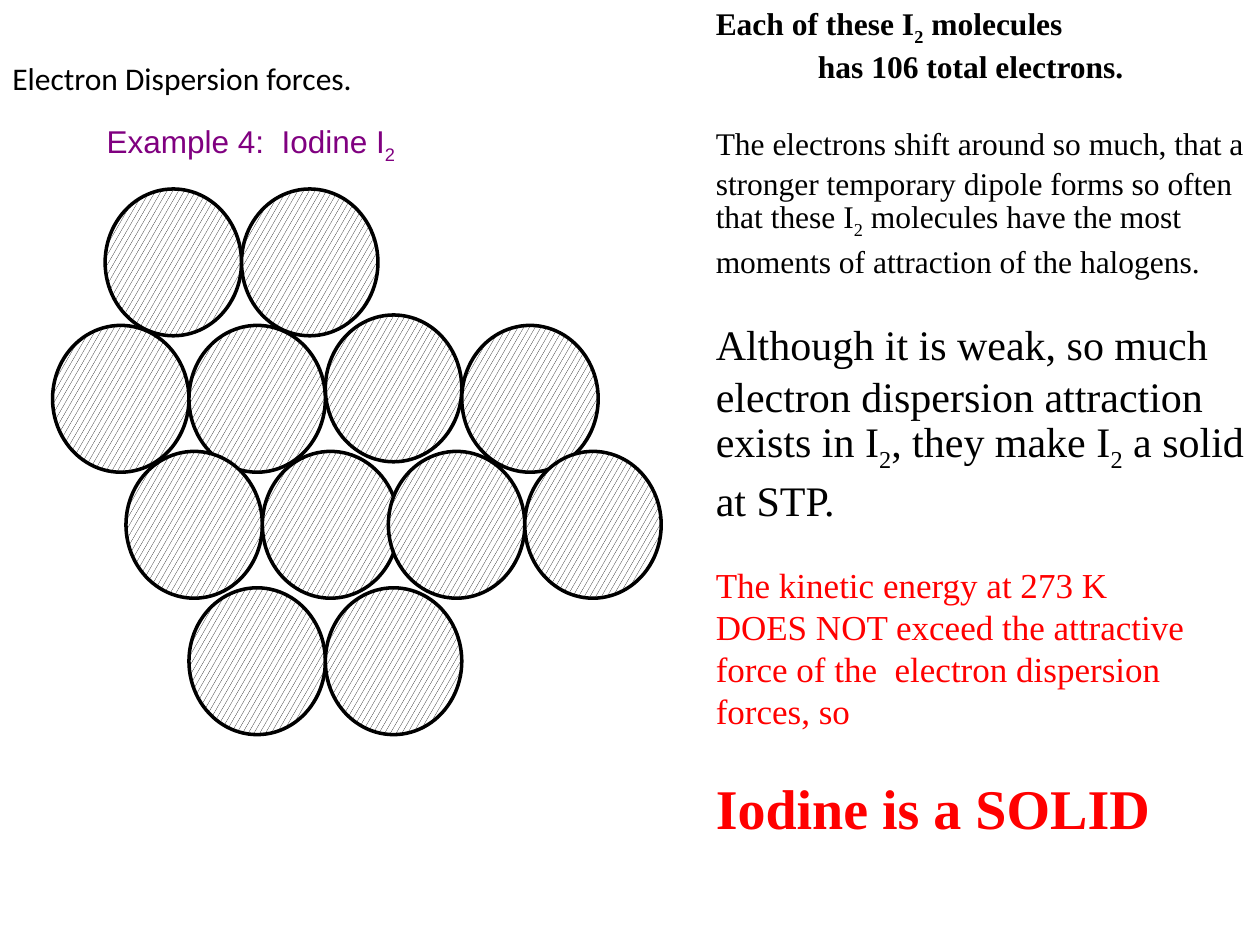
import dataclasses
import typing

import pptx
import pptx.dml.color
import pptx.enum.dml
import pptx.enum.shapes
import pptx.util

Cm = pptx.util.Cm
Pt = pptx.util.Pt

HUES = {"ink": "000000", "paper": "FFFFFF", "plum": "800080", "red": "FF0000"}
WIDE, HIGH = 2.75, 2.96
SERIF = "Times New Roman"


@dataclasses.dataclass
class Para:
    text: str
    size: float
    font: str = SERIF
    hue: str = "ink"
    bold: bool = False
    pitch: typing.Optional[float] = None
    gap: float = 0
    dent: float = 0


@dataclasses.dataclass
class Box:
    left: float
    top: float
    width: float
    height: float
    paras: list[Para]


@dataclasses.dataclass
class Pair:
    left: float
    top: float
    drop: float = 0


BOXES = [
    Box(0, 1.07, 24.33, 1.02, [Para("Electron Dispersion forces.", 18, "Calibri")]),
    Box(14.18, 0, 11.22, 16.92, [
        Para("Each of these I_2_ molecules", 18, bold=True, pitch=23.5),
        Para("has 106 total electrons.", 18, bold=True, pitch=21.6, dent=2.06),
        Para("The electrons shift around so much, that a stronger temporary "
             "dipole forms so often\nthat these I_2_ molecules have the most "
             "moments of attraction of the halogens.", 18, pitch=22.3, gap=21.8),
        Para("Although it is weak, so much electron dispersion attraction "
             "exists in I_2_, they make I_2_ a solid\nat STP.",
             24, pitch=29.8, gap=21.3),
        Para("The kinetic energy at 273 K\nDOES NOT exceed the attractive "
             "force of the  electron dispersion\nforces, so",
             20, hue="red", pitch=24, gap=21.6),
        Para("Iodine is a SOLID", 32, hue="red", bold=True, pitch=38.4, gap=24),
    ]),
    Box(1.9, 2.33, 10.16, 1.02,
        [Para("Example 4:  Iodine I_2_", 18, "Arial", "plum")]),
]

PAIRS = [
    Pair(2.12, 3.81),
    Pair(1.06, 6.56),
    Pair(6.56, 6.35, 0.21),
    Pair(2.54, 9.1),
    Pair(7.83, 9.1),
    Pair(3.81, 11.85),
]


def tint(hue: str) -> pptx.dml.color.RGBColor:
    return pptx.dml.color.RGBColor.from_string(HUES[hue])


def apply(item: typing.Any, form: dict) -> None:
    for name, value in form.items():
        setattr(item, name, value)


def write(line: typing.Any, para: Para) -> None:
    apply(line, {"space_before": Pt(para.gap)})
    if para.pitch:
        line.line_spacing = Pt(para.pitch)
    if para.dent:
        line._p.get_or_add_pPr().set("marL", str(Cm(para.dent)))
    form = {"name": para.font, "size": Pt(para.size), "bold": para.bold}
    for row, text in enumerate(para.text.split("\n")):
        if row:
            line.add_line_break()
        for part, words in enumerate(text.split("_")):
            if not words:
                continue
            run = line.add_run()
            run.text = words
            apply(run.font, form)
            run.font.color.rgb = tint(para.hue)
            if part % 2:
                run._r.get_or_add_rPr().set("baseline", "-25000")


def place(slide: typing.Any, box: Box) -> None:
    area = (box.left, box.top, box.width, box.height)
    frame = slide.shapes.add_textbox(*map(Cm, area)).text_frame
    frame.word_wrap = True
    for count, para in enumerate(box.paras):
        line = frame.add_paragraph() if count else frame.paragraphs[0]
        write(line, para)


def atom(slide: typing.Any, left: float, top: float) -> None:
    ball = slide.shapes.add_shape(
        pptx.enum.shapes.MSO_SHAPE.OVAL, *map(Cm, (left, top, WIDE, HIGH)))
    ball.shadow.inherit = False
    ball.fill.patterned()
    ball.fill.pattern = pptx.enum.dml.MSO_PATTERN.LARGE_CONFETTI
    ball.fill.fore_color.rgb = tint("ink")
    ball.fill.back_color.rgb = tint("paper")
    ball.line.color.rgb = tint("ink")
    ball.line.width = Pt(2)


def main() -> None:
    deck = pptx.Presentation()
    apply(deck, {"slide_width": Cm(25.4), "slide_height": Cm(19.05)})
    slide = deck.slides.add_slide(deck.slide_layouts[6])
    for box in BOXES:
        place(slide, box)
    for pair in PAIRS:
        atom(slide, pair.left, pair.top)
        atom(slide, pair.left + WIDE, pair.top + pair.drop)
    deck.save("out.pptx")


if __name__ == "__main__":
    main()
